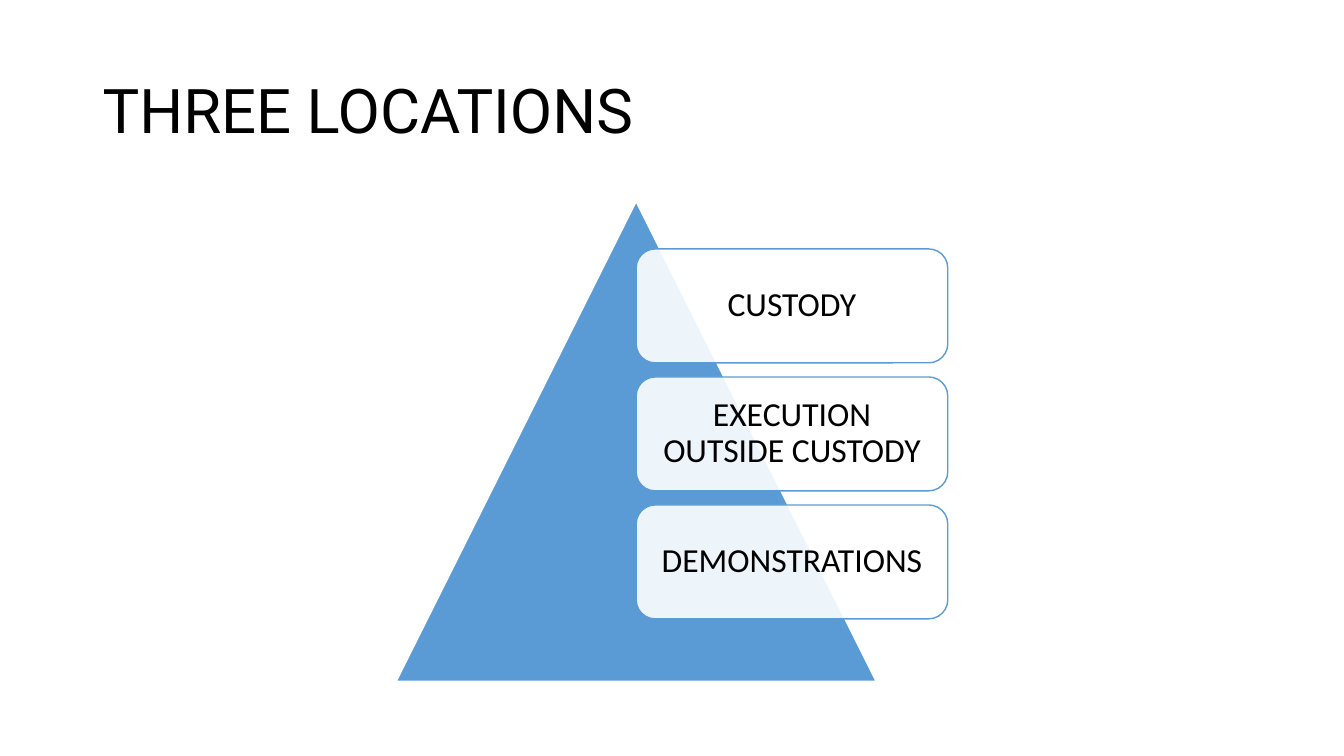
from pptx import Presentation
from pptx.dml.color import RGBColor
from pptx.enum.shapes import MSO_SHAPE as SHAPE
from pptx.enum.text import MSO_ANCHOR as ANCHOR, PP_ALIGN as ALIGN
from pptx.oxml.ns import qn
from pptx.util import Pt
from lxml import etree

PX = 9144  # EMU per px, 100 px to the inch
BLACK = RGBColor(0x00, 0x00, 0x00)
WHITE = RGBColor(0xFF, 0xFF, 0xFF)
BLUE = RGBColor(0x5B, 0x9B, 0xD5)

LOCATIONS = ["CUSTODY", "EXECUTION OUTSIDE CUSTODY", "DEMONSTRATIONS"]
CARD_LEFT, CARD_TOP, CARD_W, CARD_H, CARD_STEP = 631, 247, 309, 113, 127


class SlideBuilder:
    """Holds the style and the current slide."""

    title_font = {"name": "Roboto", "size": Pt(44)}
    card_font = {"name": "Calibri", "size": Pt(24)}

    def __init__(self, prs):
        self.slide = prs.slides.add_slide(prs.slide_layouts[6])

    def set_text(self, sp, text, font, align, inset_x, inset_y):
        tf = sp.text_frame
        frame = {
            "word_wrap": True,
            "vertical_anchor": ANCHOR.MIDDLE,
            "margin_left": inset_x * PX,
            "margin_right": inset_x * PX,
            "margin_top": inset_y * PX,
            "margin_bottom": inset_y * PX,
        }
        for name, value in frame.items():
            setattr(tf, name, value)
        p = tf.paragraphs[0]
        p.alignment = align
        p.line_spacing = 0.9
        r = p.add_run()
        r.text = text
        for name, value in font.items():
            setattr(r.font, name, value)
        r.font.color.rgb = BLACK

    def title(self, text, *box):
        sp = self.slide.shapes.add_textbox(*(n * PX for n in box))
        self.set_text(sp, text, self.title_font, ALIGN.LEFT, 10, 5)

    def shape(self, kind, fill, line, *box):
        sp = self.slide.shapes.add_shape(kind, *(n * PX for n in box))
        sp.shadow.inherit = False
        sp.fill.solid()
        sp.fill.fore_color.rgb = fill
        sp.line.color.rgb = line
        sp.line.width = Pt(1)
        return sp

    def card(self, text, *box):
        sp = self.shape(SHAPE.ROUNDED_RECTANGLE, WHITE, BLUE, *box)
        # Let the triangle show faintly through the card
        color = sp.element.spPr.find(qn("a:solidFill"))[0]
        etree.SubElement(color, qn("a:alpha")).set("val", "90000")
        self.set_text(sp, text, self.card_font, ALIGN.CENTER, 10, 10)


def main():
    prs = Presentation()
    prs.slide_width, prs.slide_height = 1333 * PX, 750 * PX
    s = SlideBuilder(prs)

    # Title
    s.title("THREE LOCATIONS", 92, 40, 1150, 145)

    # Triangle behind the cards
    s.shape(SHAPE.ISOSCELES_TRIANGLE, BLUE, WHITE, 393, 200, 476, 476)

    # One card per location
    for i, location in enumerate(LOCATIONS):
        s.card(location, CARD_LEFT, CARD_TOP + i * CARD_STEP, CARD_W, CARD_H)

    prs.save("out.pptx")


if __name__ == "__main__":
    main()
